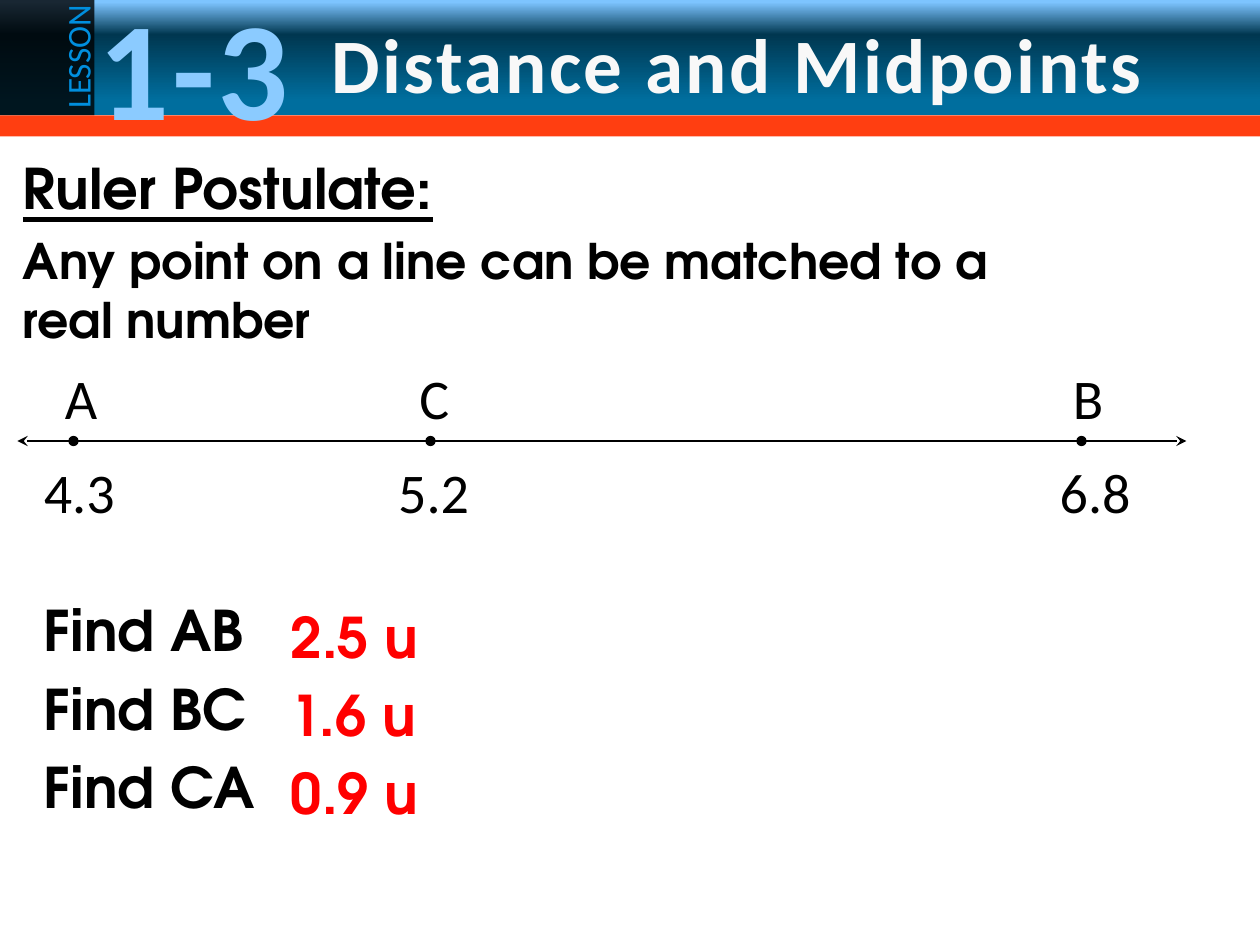
from lxml.etree import SubElement
from pptx import Presentation
from pptx.dml.color import RGBColor
from pptx.enum.shapes import MSO_CONNECTOR, MSO_SHAPE
from pptx.enum.text import MSO_ANCHOR, PP_ALIGN
from pptx.oxml import parse_xml
from pptx.oxml.ns import nsdecls, qn
from pptx.util import Pt

COLORS = {
    "black": "000000", "red": "FF0000", "orange": "FF3E11", "white": "F8F8F8",
    "lesson": "008FDE", "number": "8BCBFF",
    "sky": "7DC4FF", "navy": "003750", "blue": "006E9E",
}
HEADER_STOPS = [(2, "sky"), (30, "navy"), (87, "blue"), (100, "blue")]
BODY = {"name": "TeX Gyre Adventor", "size": Pt(32), "bold": True}
LABEL = {"name": "Calibri", "size": Pt(32)}
AXIS_Y = 252


def rgb(name):
    return RGBColor.from_string(COLORS[name])


def add_bar(s, box, color):
    bar = s.shapes.add_shape(MSO_SHAPE.RECTANGLE, *map(Pt, box))
    bar.shadow.inherit = False
    bar.line.fill.background()
    bar.fill.solid()
    bar.fill.fore_color.rgb = rgb(color)
    return bar


def set_gradient(shape, stops):
    """Replace the solid fill with a top-to-bottom gradient."""
    gs = "".join(f'<a:gs pos="{pos * 1000}"><a:srgbClr val="{COLORS[c]}"/></a:gs>'
                 for pos, c in stops)
    solid = shape._element.spPr.find(qn("a:solidFill"))
    solid.addprevious(parse_xml(
        f'<a:gradFill {nsdecls("a")} rotWithShape="1"><a:gsLst>{gs}</a:gsLst>'
        '<a:lin ang="5400000" scaled="0"/></a:gradFill>'))
    shape._element.spPr.remove(solid)


def set_opacity(shape, percent):
    color = shape._element.spPr.find(f'{qn("a:solidFill")}/{qn("a:srgbClr")}')
    SubElement(color, qn("a:alpha"), val=str(percent * 1000))


def write(tf, lines, font, color="black", wrap=True):
    """Fill a text frame; later paragraphs get a gap of 20% of their size."""
    tf.word_wrap = wrap
    tf.vertical_anchor = MSO_ANCHOR.TOP
    for i, (text, extra) in enumerate(lines):
        p = tf.paragraphs[0] if i == 0 else tf.add_paragraph()
        r = p.add_run()
        r.text = text
        for key, value in {**font, **extra}.items():
            setattr(r.font, key, value)
        r.font.color.rgb = rgb(color)
        if i:
            p.space_before = Pt(round(r.font.size.pt * 0.2, 1))


def add_text(s, box, lines, font, color="black", wrap=True):
    tb = s.shapes.add_textbox(*map(Pt, box))
    write(tb.text_frame, lines, font, color, wrap)
    return tb


def spread_letters(shape):
    rPr = shape.text_frame.paragraphs[0].runs[0]._r.get_or_add_rPr()
    rPr.set("spc", "150")
    return rPr


def add_axis_line(s, start, end, **ends):
    line = s.shapes.add_connector(
        MSO_CONNECTOR.STRAIGHT, Pt(start), Pt(AXIS_Y), Pt(end), Pt(AXIS_Y))
    line.line.color.rgb = rgb("black")
    line.line.width = Pt(1)
    ln = line.line._get_or_add_ln()
    for tag, kind in ends.items():
        SubElement(ln, qn(f"a:{tag}"), type=kind)
    SubElement(line._element.spPr, qn("a:effectLst"))


def add_header(s):
    band = add_bar(s, (0, 0, 720, 66), "blue")
    set_gradient(band, HEADER_STOPS)
    set_opacity(add_bar(s, (0, 0, 54, 66), "black"), 80)
    add_bar(s, (0, 66, 720, 12), "orange")

    lesson = add_text(s, (6.5, 16.5, 75.5, 30), [("LESSON", {})],
                      {"name": "Calibri", "size": Pt(19)}, "lesson")
    lesson.rotation = 270
    number = add_text(s, (48, -14.4, 125.5, 104.4), [("1-3", {})],
                      {"name": "Calibri", "size": Pt(80), "bold": True},
                      "number", wrap=False)
    number.text_frame.paragraphs[0].alignment = PP_ALIGN.CENTER
    spread_letters(number)


def add_title(s, text):
    title = s.shapes.title
    frame = {"left": 182, "top": 6, "width": 484, "height": 60.5}
    for key, value in frame.items():
        setattr(title, key, Pt(value))
    write(title.text_frame, [(text, {})],
          {"name": "Calibri", "size": Pt(44), "bold": True}, "white", wrap=False)
    title.text_frame.paragraphs[0].alignment = PP_ALIGN.LEFT
    rPr = spread_letters(title)
    rPr.find(qn("a:solidFill")).addnext(parse_xml(
        f'<a:effectLst {nsdecls("a")}><a:outerShdw blurRad="38100" dist="38100" '
        'dir="2700000"><a:srgbClr val="000000"/></a:outerShdw></a:effectLst>'))
    s.shapes._spTree.append(title._element)  # in front of the header band


def add_number_line(s):
    add_axis_line(s, 42, 618, headEnd="oval", tailEnd="oval")
    add_axis_line(s, 228, 246, tailEnd="oval")
    add_axis_line(s, 94, 10, tailEnd="stealth")
    add_axis_line(s, 594, 678, tailEnd="stealth")
    points = [("A", 30, "4.3", 18), ("C", 232.5, "5.2", 220.5),
              ("B", 606, "6.8", 598.5)]
    for name, name_x, value, value_x in points:
        add_text(s, (name_x, 204, 48, 45.5), [(name, {})], LABEL)
        add_text(s, (value_x, 258, 78, 45.5), [(value, {})], LABEL)


def main():
    prs = Presentation()
    prs.slide_width, prs.slide_height = Pt(720), Pt(540)
    s = prs.slides.add_slide(prs.slide_layouts[5])
    add_header(s)
    add_title(s, "Distance and Midpoints")
    add_text(s, (6, 84, 624, 121), [
        ("Ruler Postulate:", {"underline": True}),
        ("Any point on a line can be matched to a real number", {"size": Pt(28)}),
    ], BODY)
    add_number_line(s)
    add_text(s, (18, 337, 624, 139),
             [(f"Find {segment}", {}) for segment in ("AB", "BC", "CA")], BODY)
    add_text(s, (159, 340.5, 153.5, 139),
             [(f"{length} u", {}) for length in ("2.5", "1.6", "0.9")], BODY, "red")
    prs.save("out.pptx")


if __name__ == "__main__":
    main()
